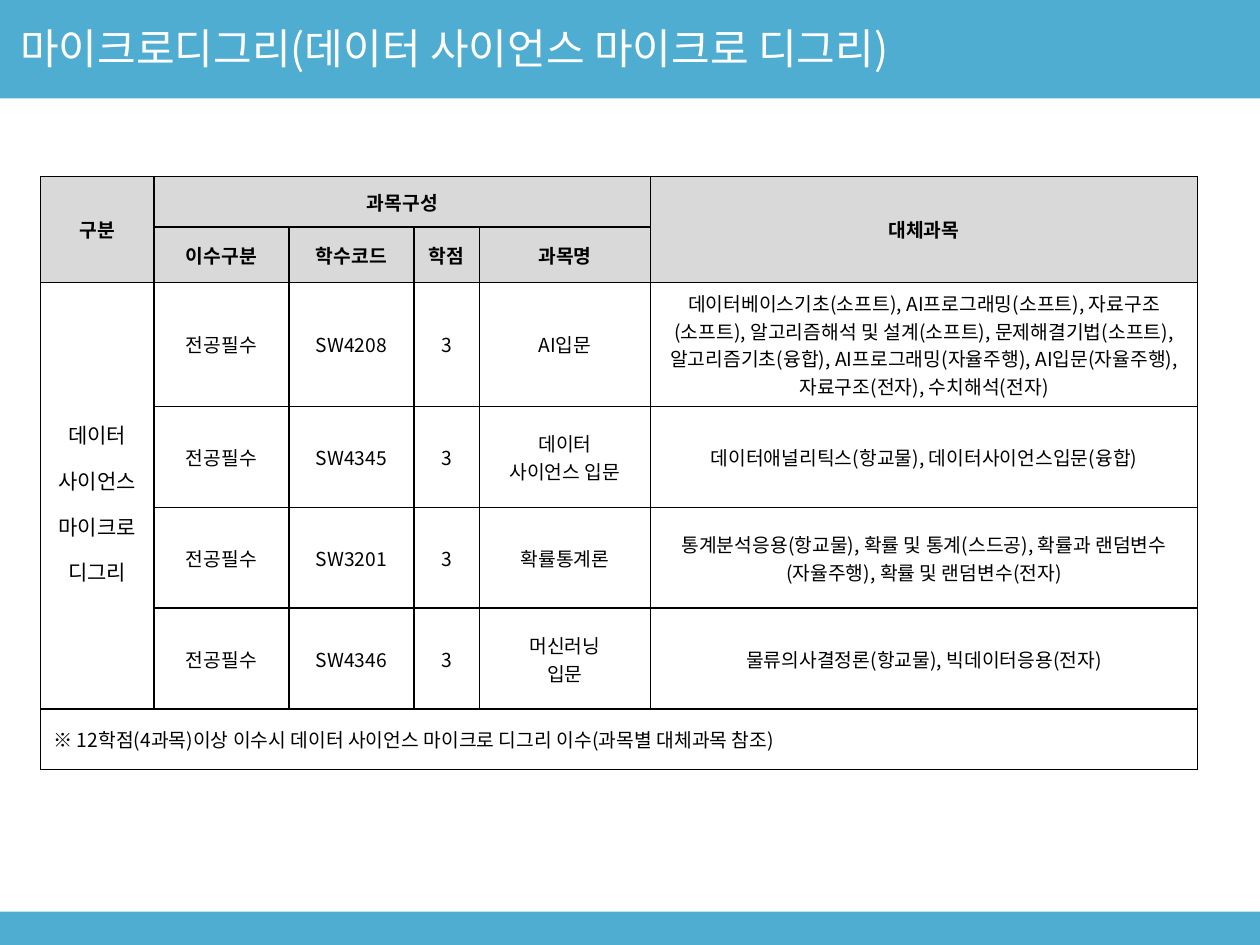
from dataclasses import dataclass

from lxml import etree
from pptx import Presentation
from pptx.dml.color import RGBColor
from pptx.enum import shapes, text
from pptx.oxml import ns
from pptx.util import Pt

FONT = "Noto Sans CJK KR"
BLUE, GRAY, WHITE, BLACK = "4FADD1", "D9D9D9", "FFFFFF", "000000"
COLUMN_WIDTHS = [64.8, 77.2, 71.3, 37.4, 98, 312.3]
ROW_HEIGHTS = [28.8, 31.6, 57.6, 57.6, 57.6, 57.6, 34.6]


@dataclass
class Band:
    top: float
    width: float
    height: float


@dataclass
class Entry:
    row: int
    column: int
    content: str
    rows: int = 1
    columns: int = 1
    header: bool = False
    size: float = 11
    spacing: float = 1.0
    align: text.PP_ALIGN = text.PP_ALIGN.CENTER


@dataclass
class Course:
    code: str
    subject: str
    substitutes: str


COURSES = [
    Course("SW4208", "AI입문",
           "데이터베이스기초(소프트), AI프로그래밍(소프트), 자료구조(소프트), "
           "알고리즘해석 및 설계(소프트), 문제해결기법(소프트), 알고리즘기초(융합), "
           "AI프로그래밍(자율주행), AI입문(자율주행), 자료구조(전자), 수치해석(전자)"),
    Course("SW4345", "데이터\n사이언스 입문",
           "데이터애널리틱스(항교물), 데이터사이언스입문(융합)"),
    Course("SW3201", "확률통계론",
           "통계분석응용(항교물), 확률 및 통계(스드공), 확률과 랜덤변수(자율주행), "
           "확률 및 랜덤변수(전자)"),
    Course("SW4346", "머신러닝\n입문", "물류의사결정론(항교물), 빅데이터응용(전자)"),
]


def paint(color_format, color: str) -> None:
    color_format.rgb = RGBColor.from_string(color)


def fill(target, color: str) -> None:
    target.fill.solid()
    paint(target.fill.fore_color, color)


def write(frame, content: str, *, size: float = 11, color: str = BLACK,
          bold: bool = False, spacing: float = 1.0,
          align: text.PP_ALIGN = text.PP_ALIGN.CENTER) -> None:
    for index, line in enumerate(content.split("\n")):
        paragraph = frame.add_paragraph() if index else frame.paragraphs[0]
        paragraph.alignment = align
        paragraph.line_spacing = spacing
        run = paragraph.add_run()
        run.text = line
        run.font.name = FONT
        run.font.size = Pt(size)
        run.font.bold = bold
        paint(run.font.color, color)
        east_asian = etree.SubElement(run.font._element, ns.qn("a:ea"))
        east_asian.set("typeface", FONT)


def draw_band(slide, band: Band) -> None:
    bar = slide.shapes.add_shape(shapes.MSO_SHAPE.RECTANGLE, 0, Pt(band.top),
                                 Pt(band.width), Pt(band.height))
    bar.shadow.inherit = False
    bar.line.fill.background()
    fill(bar, BLUE)


def draw_title(slide, content: str) -> None:
    title = slide.shapes.title
    title.left, title.top, title.width, title.height = Pt(4.3), 0, Pt(643.7), Pt(54.7)
    frame = title.text_frame
    frame.word_wrap = True
    frame.auto_size = text.MSO_AUTO_SIZE.NONE
    frame.vertical_anchor = text.MSO_ANCHOR.MIDDLE
    write(frame, content, size=24, color=WHITE, align=text.PP_ALIGN.LEFT)
    title.element.getparent().append(title.element)


def add_borders(cell) -> None:
    properties = cell._tc.get_or_add_tcPr()
    for position, side in enumerate(("lnL", "lnR", "lnT", "lnB")):
        border = etree.Element(ns.qn(f"a:{side}"), w=str(Pt(1)))
        solid = etree.SubElement(border, ns.qn("a:solidFill"))
        etree.SubElement(solid, ns.qn("a:srgbClr"), val=BLACK)
        properties.insert(position, border)


def draw_entry(table, entry: Entry) -> None:
    cell = table.cell(entry.row, entry.column)
    if entry.rows > 1 or entry.columns > 1:
        cell.merge(table.cell(entry.row + entry.rows - 1,
                              entry.column + entry.columns - 1))
    cell.vertical_anchor = text.MSO_ANCHOR.MIDDLE
    write(cell.text_frame, entry.content, size=entry.size, bold=entry.header,
          spacing=entry.spacing, align=entry.align)
    if entry.header:
        fill(cell, GRAY)


def curriculum_entries() -> list[Entry]:
    entries = [
        Entry(0, 0, "구분", rows=2, header=True),
        Entry(0, 1, "과목구성", columns=4, header=True),
        Entry(0, 5, "대체과목", rows=2, header=True),
        Entry(2, 0, "데이터\n사이언스\n마이크로\n디그리", rows=4, size=12, spacing=1.5),
        Entry(6, 0, "※ 12학점(4과목)이상 이수시 데이터 사이언스 마이크로 디그리 "
              "이수(과목별 대체과목 참조)", columns=6, align=text.PP_ALIGN.LEFT),
    ]
    for column, heading in enumerate(("이수구분", "학수코드", "학점", "과목명"), 1):
        entries.append(Entry(1, column, heading, header=True))
    for row, course in enumerate(COURSES, 2):
        values = ("전공필수", course.code, "3", course.subject, course.substitutes)
        entries += [Entry(row, column, value) for column, value in enumerate(values, 1)]
    return entries


def draw_curriculum(slide) -> None:
    table = slide.shapes.add_table(
        len(ROW_HEIGHTS), len(COLUMN_WIDTHS), Pt(23.2), Pt(100.9),
        Pt(sum(COLUMN_WIDTHS)), Pt(sum(ROW_HEIGHTS))).table
    table.first_row = table.horz_banding = False
    for column, width in zip(table.columns, COLUMN_WIDTHS):
        column.width = Pt(width)
    for row, height in zip(table.rows, ROW_HEIGHTS):
        row.height = Pt(height)
    for cell in table.iter_cells():
        cell.fill.background()
        add_borders(cell)
    for entry in curriculum_entries():
        draw_entry(table, entry)


def main() -> None:
    presentation = Presentation()
    presentation.slide_width, presentation.slide_height = Pt(720), Pt(540)
    slide = presentation.slides.add_slide(presentation.slide_layouts[5])
    for band in (Band(0, 720.5, 56.2), Band(521, 720, 19)):
        draw_band(slide, band)
    draw_title(slide, "마이크로디그리(데이터 사이언스 마이크로 디그리)")
    draw_curriculum(slide)
    presentation.save("out.pptx")


if __name__ == "__main__":
    main()
